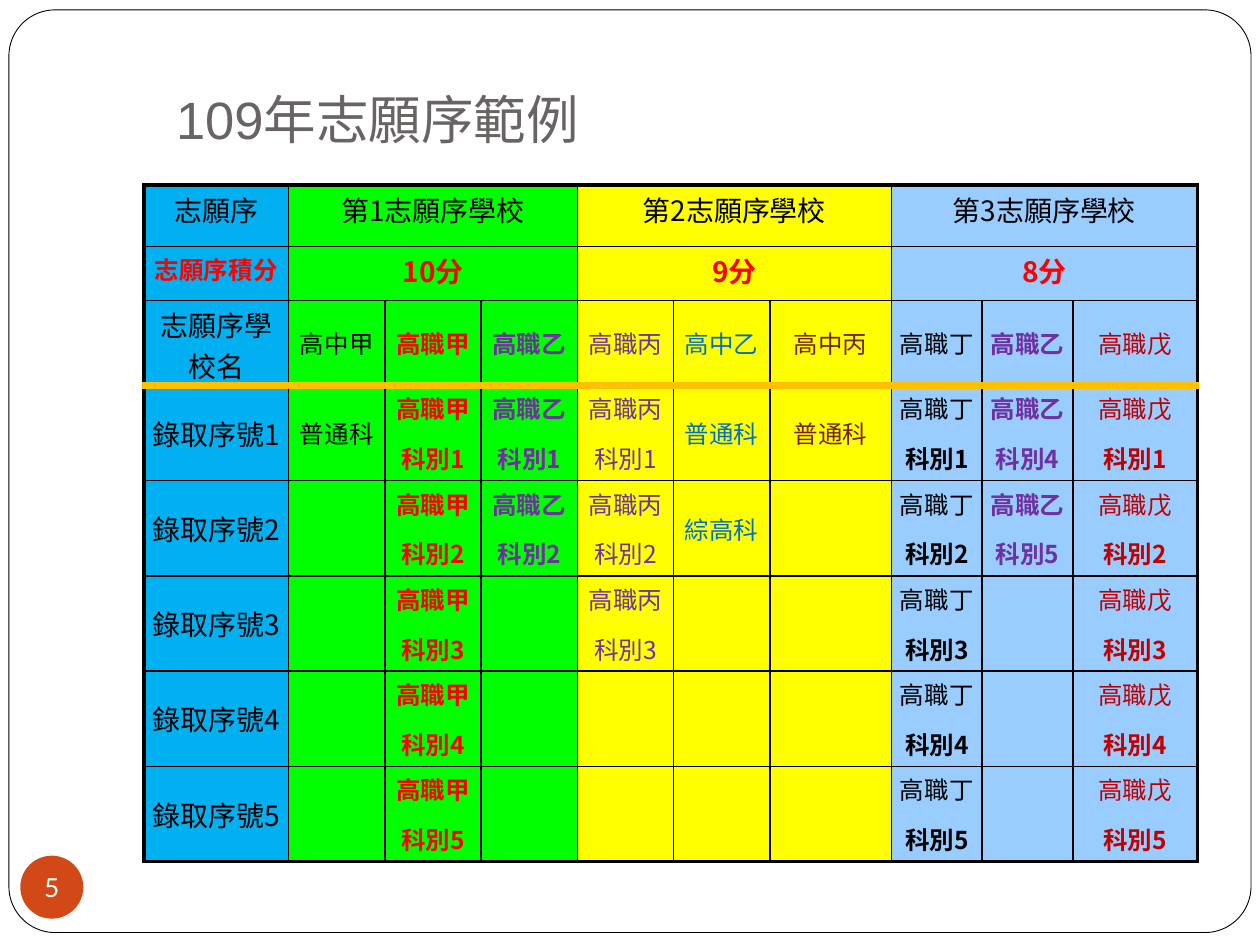
from lxml.etree import SubElement as Sub
from pptx import Presentation
from pptx.dml.color import RGBColor as Rgb
from pptx.enum.shapes import MSO_SHAPE as Shape
from pptx.enum.text import MSO_ANCHOR as Anchor, PP_ALIGN as Align
from pptx.oxml.ns import qn
from pptx.util import Cm, Pt

TITLE = "109年志願序範例"
PAGE = "5"
GROUPS = [
    ("第1志願序學校", "10分", "green"),
    ("第2志願序學校", "9分", "yellow"),
    ("第3志願序學校", "8分", "sky"),
]
HEADS = ["志願序", "志願序積分", "志願序學校名"]
RANK = "錄取序號"
DEPT = "科別"
SCHOOLS = [
    ("高中甲", "black", False, False, ["普通科"]),
    ("高職甲", "red", True, True, [1, 2, 3, 4, 5]),
    ("高職乙", "purple", True, True, [1, 2]),
    ("高職丙", "purple", False, False, [1, 2, 3]),
    ("高中乙", "blue", False, False, ["普通科", "綜高科"]),
    ("高中丙", "brown", False, False, ["普通科"]),
    ("高職丁", "black", False, True, [1, 2, 3, 4, 5]),
    ("高職乙", "purple", True, True, [4, 5]),
    ("高職戊", "wine", False, True, [1, 2, 3, 4, 5]),
]
WIDTHS = [2.92] + [1.94] * 5 + [2.45, 1.83, 1.83, 2.51]
RANKS = 5
HEIGHTS = [1.24, 1.09, 1.71] + [1.92] * RANKS
SPAN = len(SCHOOLS) // len(GROUPS)
ROWS, COLS = len(HEIGHTS), len(WIDTHS)

THEME = {
    "color": {
        "black": "000000", "white": "FFFFFF", "grey": "696464",
        "red": "FF0000", "purple": "7030A0", "blue": "0070C0",
        "brown": "742217", "wine": "C00000", "cyan": "00B0F0",
        "green": "00FF00", "yellow": "FFFF00", "sky": "99CCFF",
        "gold": "FFC000", "rust": "D34817",
    },
    "size": {"title": 30, "head": 16, "body": 14, "page": 15},
    "line": {"thin": 1, "edge": 2.25, "rule": 4.5, "frame": 0.5},
    "font": {"title": "Arial", "body": "Noto Sans CJK SC", "page": "Lato"},
}


def tint(name):
    """Return a theme colour."""
    return Rgb.from_string(THEME["color"][name])


def setall(obj, vals):
    """Set each named value on an object."""
    for key, val in vals.items():
        setattr(obj, key, val)


def write(frame, lines, face="body", gap=None, align=Align.CENTER):
    """Write lines of (text, size, colour, bold) into a text frame."""
    for n, (text, size, color, bold) in enumerate(lines):
        para = frame.paragraphs[0] if n == 0 else frame.add_paragraph()
        setall(para, {"alignment": align, "space_before": gap})
        run = para.add_run()
        run.text = text
        setall(run.font, {
            "name": THEME["font"][face],
            "size": Pt(THEME["size"][size]),
            "bold": bold,
        })
        run.font.color.rgb = tint(color)
        east = Sub(run.font._element, qn("a:ea"))
        east.set("typeface", THEME["font"]["body"])


def border(cell, side, color, line):
    """Draw one side of a cell."""
    width = Pt(THEME["line"][line])
    edge = Sub(cell._tc.get_or_add_tcPr(), qn(f"a:ln{side}"), w=str(width))
    fill = Sub(edge, qn("a:solidFill"))
    Sub(fill, qn("a:srgbClr"), val=THEME["color"][color])


def style(cell, row, col, last, color):
    """Give a cell its borders, fill, margins and anchor."""
    thin, edge, rule = ("black", "thin"), ("black", "edge"), ("gold", "rule")
    sides = {
        "L": edge if col == 0 else thin,
        "R": edge if last == COLS - 1 else thin,
        "T": edge if row == 0 else rule if row == 3 else thin,
        "B": edge if row == ROWS - 1 else rule if row == 2 else thin,
    }
    for side, look in sides.items():
        border(cell, side, *look)
    cell.fill.solid()
    cell.fill.fore_color.rgb = tint(color)
    setall(cell, {
        "margin_left": Cm(0.16), "margin_right": Cm(0.16),
        "margin_top": Cm(0.08), "margin_bottom": Cm(0.08),
        "vertical_anchor": Anchor.TOP if row < 2 else Anchor.MIDDLE,
    })


def label(row):
    """Return the line for the first column of a row."""
    if row == 1:
        return (HEADS[row], "body", "red", True)
    text = HEADS[row] if row < 3 else f"{RANK}{row - 2}"
    return (text, "head", "black", False)


def entry(row, school):
    """Return the lines for a school in a row."""
    name, color, bold, strong, depts = school
    top = (name, "body", color, bold)
    if row == 2:
        return [top]
    if row - 3 >= len(depts):
        return []
    dept = depts[row - 3]
    if isinstance(dept, str):
        return [(dept, "body", color, bold)]
    return [top, (f"{DEPT}{dept}", "body", color, strong)]


def lines(row, col):
    """Return the lines of any cell."""
    if col == 0:
        return [label(row)]
    if row > 1:
        return entry(row, SCHOOLS[col - 1])
    text = GROUPS[(col - 1) // SPAN][row]
    return [(text, "head", "red" if row else "black", bool(row))]


def grid(slide):
    """Build the table of choices."""
    size = (Cm(sum(WIDTHS)), Cm(sum(HEIGHTS)))
    table = slide.shapes.add_table(ROWS, COLS, Cm(2.9), Cm(3.73), *size).table
    setall(table, {"first_row": False, "horz_banding": False})
    for part, width in zip(table.columns, WIDTHS):
        part.width = Cm(width)
    for part, height in zip(table.rows, HEIGHTS):
        part.height = Cm(height)
    for row in range(ROWS):
        for col in range(COLS):
            cell = table.cell(row, col)
            if cell.is_spanned:
                continue
            last = col
            if row < 2 and col:
                last = col + SPAN - 1
                cell.merge(table.cell(row, last))
            color = GROUPS[(col - 1) // SPAN][2] if col else "cyan"
            style(cell, row, col, last, color)
            write(cell.text_frame, lines(row, col), gap=Pt(8))


def block(slide, kind, box, color):
    """Add a flat filled shape."""
    item = slide.shapes.add_shape(kind, *map(Cm, box))
    item.shadow.inherit = False
    item.fill.solid()
    item.fill.fore_color.rgb = tint(color)
    return item


def main():
    """Build and save the slide."""
    deck = Presentation()
    setall(deck, {"slide_width": Cm(25.4), "slide_height": Cm(19.05)})
    slide = deck.slides.add_slide(deck.slide_layouts[6])

    frame = block(slide, Shape.ROUNDED_RECTANGLE, (0.18, 0.2, 25.04, 18.6), "white")
    frame.adjustments[0] = 0.05
    frame.line.color.rgb = tint("black")
    frame.line.width = Pt(THEME["line"]["frame"])

    title = slide.shapes.add_textbox(*map(Cm, (3.3, 1.27, 13.92, 2))).text_frame
    setall(title, {
        "word_wrap": True, "vertical_anchor": Anchor.BOTTOM,
        "margin_bottom": Cm(0.25),
    })
    write(title, [(TITLE, "title", "grey", False)], "title", align=Align.LEFT)

    grid(slide)

    badge = block(slide, Shape.OVAL, (0.41, 17.25, 1.27, 1.27), "rust")
    badge.line.fill.background()
    setall(badge.text_frame, {
        "word_wrap": False, "vertical_anchor": Anchor.MIDDLE,
        "margin_left": 0, "margin_right": 0,
        "margin_top": 0, "margin_bottom": 0,
    })
    write(badge.text_frame, [(PAGE, "page", "white", False)], "page")
    deck.save("out.pptx")


if __name__ == "__main__":
    main()
